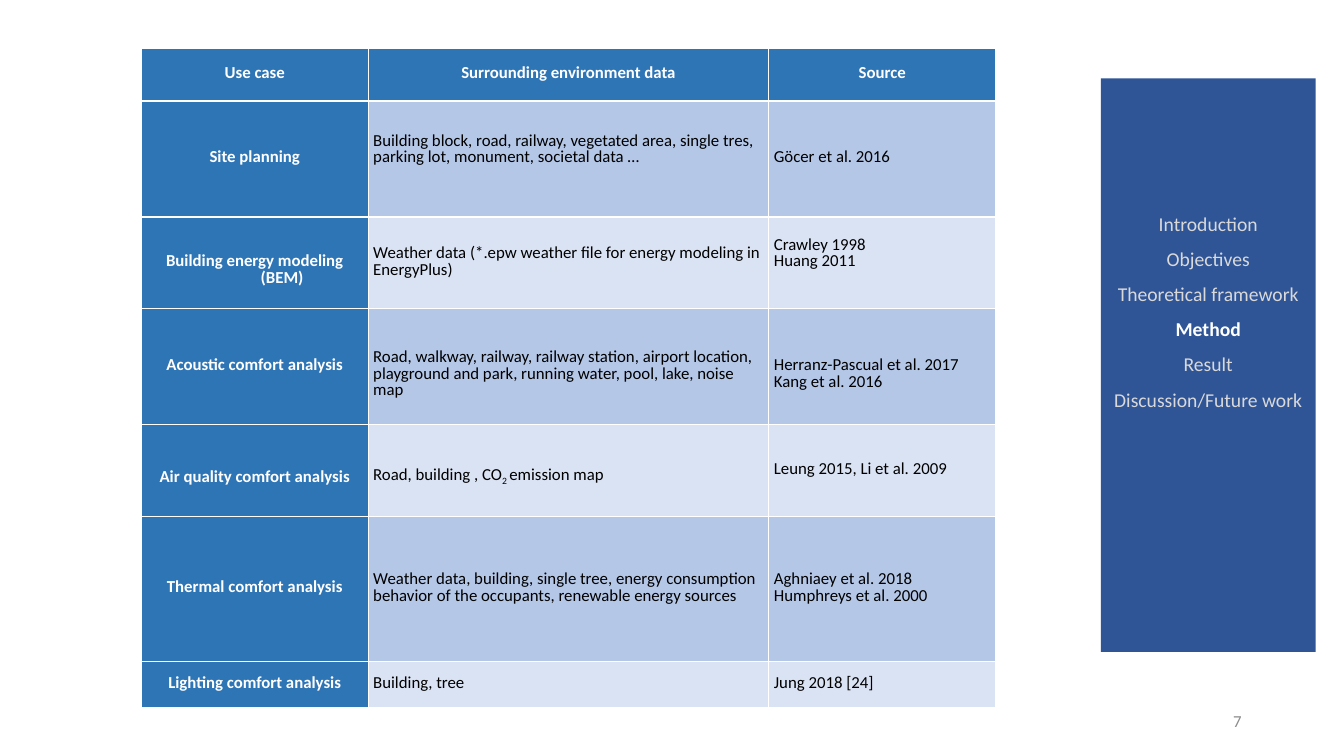
from lxml import etree
from pptx import Presentation
from pptx import util as u
from pptx.dml.color import RGBColor
from pptx.enum import shapes, text
from pptx.oxml import ns

Pt = u.Pt
FONT = "Calibri"
COLORS = {
    "white": "FFFFFF", "black": "000000", "header": "2E75B6",
    "odd": "B4C7E7", "even": "DAE3F3", "panel": "2F5597",
    "muted": "D9D9D9", "number": "8C8C8C",
}
LINE = 12  # line pitch in table cells
HANG = 39  # hanging indent of the use cases

HEADINGS = ["Use case", "Surrounding environment data", "Source"]
COL_WIDTHS = [162, 286.2, 162]
HEADER_HEIGHT = 37.4
# Row height, cell texts, and each cell's shift in lines (positive is down)
USE_CASES = [
    (82.8, ["Site planning",
            "Building block, road, railway, vegetated area, single tres, "
            "parking lot, monument, societal data …",
            "Göcer et al. 2016"], (0, -1, 0)),
    (65.6, ["Building energy modeling (BEM)",
            "Weather data (*.epw weather file for energy modeling in EnergyPlus)",
            "Crawley 1998\nHuang 2011"], (1, 0, -1)),
    (82.8, ["Acoustic comfort analysis",
            "Road, walkway, railway, railway station, airport location, "
            "playground and park, running water, pool, lake, noise map",
            "Herranz-Pascual et al. 2017\nKang et al. 2016"], (0, 1, 1)),
    (65.6, ["Air quality comfort analysis",
            "Road, building , CO_2 _emission map",
            "Leung 2015, Li et al. 2009"], (1, 1, 0)),
    (103.6, ["Thermal comfort analysis",
             "Weather data, building, single tree, energy consumption "
             "behavior of the occupants, renewable energy sources",
             "Aghniaey et al. 2018\nHumphreys et al. 2000"], (0, 0, 0)),
    (33, ["Lighting comfort analysis", "Building, tree", "Jung 2018 [24]"],
     (0, 0, 0)),
]
SECTIONS = ["Introduction", "Objectives", "Theoretical framework", "Method",
            "Result", "Discussion/Future work"]
CURRENT = "Method"


def rgb(name):
    return RGBColor.from_string(COLORS[name])


def set_font(p, size, color, bold=False):
    p.font.name = FONT
    p.font.size = Pt(size)
    p.font.bold = bold
    p.font.color.rgb = rgb(color)


def add_runs(p, line):
    """Add runs to a paragraph; text between underscores is subscript."""
    for i, piece in enumerate(line.split("_")):
        r = p.add_run()
        r.text = piece
        if i % 2:
            r.font._element.set("baseline", "-25000")


def add_borders(cell):
    tcPr = cell._tc.get_or_add_tcPr()
    for side in ("lnL", "lnR", "lnT", "lnB"):
        ln = etree.SubElement(tcPr, ns.qn(f"a:{side}"), w=str(Pt(1)))
        fill = etree.SubElement(ln, ns.qn("a:solidFill"))
        etree.SubElement(fill, ns.qn("a:srgbClr"), val=COLORS["white"])


def fill_cell(cell, content, fill, heading, hanging, shift=0):
    add_borders(cell)
    cell.fill.solid()
    cell.fill.fore_color.rgb = rgb(fill)
    cell.vertical_anchor = text.MSO_ANCHOR.MIDDLE
    cell.margin_left = cell.margin_right = Pt(3.6)
    cell.margin_top = Pt(LINE * max(shift, 0))
    cell.margin_bottom = Pt(LINE * max(-shift, 0))
    tf = cell.text_frame
    for i, line in enumerate(content.split("\n")):
        p = tf.add_paragraph() if i else tf.paragraphs[0]
        add_runs(p, line)
        p.line_spacing = Pt(LINE)
        p.alignment = text.PP_ALIGN.CENTER if heading else text.PP_ALIGN.LEFT
        if hanging:
            pPr = p._p.get_or_add_pPr()
            pPr.set("marL", str(Pt(HANG)))
            pPr.set("indent", str(-Pt(HANG)))
        set_font(p, 12, "white" if heading else "black", heading)


def add_use_case_table(s, left, top):
    heights = [HEADER_HEIGHT] + [height for height, _, _ in USE_CASES]
    table = s.shapes.add_table(
        len(heights), len(COL_WIDTHS), Pt(left), Pt(top),
        Pt(sum(COL_WIDTHS)), Pt(sum(heights))).table
    table.first_row = table.horz_banding = False
    for column, width in zip(table.columns, COL_WIDTHS):
        column.width = Pt(width)
    for row, height in zip(table.rows, heights):
        row.height = Pt(height)

    # Header row
    for c, heading in enumerate(HEADINGS):
        fill_cell(table.cell(0, c), heading, "header", True, c == 0)

    # Use cases in alternating bands
    for r, (_, contents, shifts) in enumerate(USE_CASES, 1):
        band = "odd" if r % 2 else "even"
        for c, (content, shift) in enumerate(zip(contents, shifts)):
            first = c == 0
            fill_cell(table.cell(r, c), content, "header" if first else band,
                      first, first, shift)


def add_section_panel(s, left, top, width, height):
    box = Pt(left), Pt(top), Pt(width), Pt(height)
    panel = s.shapes.add_shape(shapes.MSO_SHAPE.RECTANGLE, *box)
    panel.shadow.inherit = False
    panel.fill.solid()
    panel.fill.fore_color.rgb = rgb("panel")
    panel.line.fill.background()

    # Section names
    tf = s.shapes.add_textbox(*box).text_frame
    tf.word_wrap = True
    tf.margin_top = Pt(97)
    tf.text = "\n".join(SECTIONS)
    for i, p in enumerate(tf.paragraphs):
        current = SECTIONS[i] == CURRENT
        p.alignment = text.PP_ALIGN.CENTER
        p.line_spacing = 0.9
        p.space_before = Pt(10 if i else 0)
        set_font(p, 14, "white" if current else "muted", current)


def add_page_number(s, left, top, width, height, number):
    sp = s.shapes.add_textbox(Pt(left), Pt(top), Pt(width), Pt(height))
    tf = sp.text_frame
    tf.word_wrap = True
    tf.vertical_anchor = text.MSO_ANCHOR.MIDDLE
    p = tf.paragraphs[0]
    p.text = str(number)
    p.alignment = text.PP_ALIGN.RIGHT
    set_font(p, 12, "number")


def main():
    prs = Presentation()
    prs.slide_width, prs.slide_height = Pt(960), Pt(540)
    s = prs.slides.add_slide(prs.slide_layouts[6])
    add_page_number(s, 678, 500.4, 216, 28.8, 7)
    add_section_panel(s, 786.4, 56, 153.4, 409.7)
    add_use_case_table(s, 101, 34.8)
    prs.save("out.pptx")


if __name__ == "__main__":
    main()
